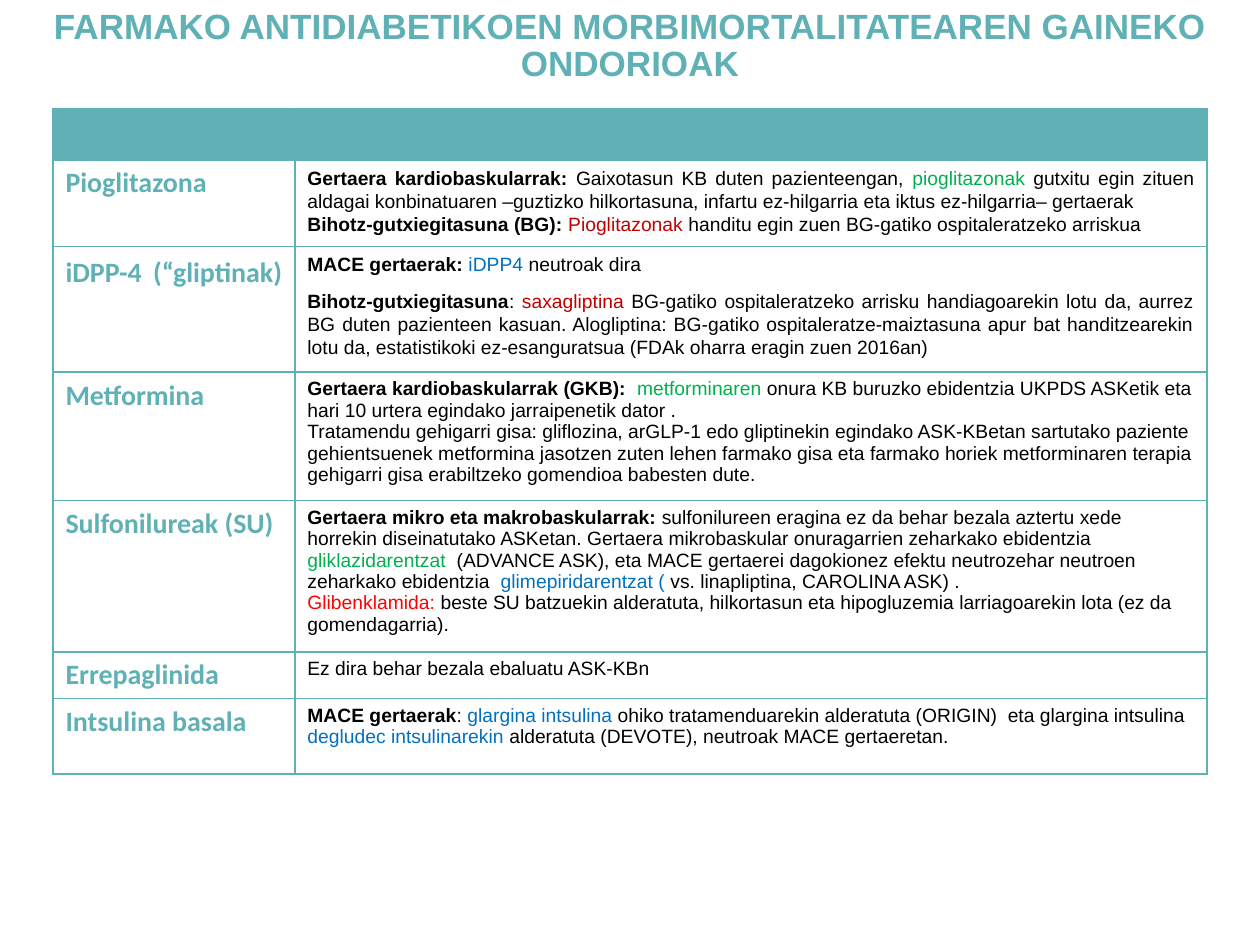
from lxml.etree import SubElement
from pptx import Presentation
from pptx.dml.color import RGBColor
from pptx.enum.text import MSO_ANCHOR, PP_ALIGN as Align
from pptx.oxml.ns import qn
from pptx.util import Inches, Pt

COLORS = {
    "teal": "5FB1B6", "white": "FFFFFF", "text": "000000", "green": "00B050",
    "blue": "0070C0", "dark red": "C00000", "red": "FF0000",
}
TITLE = "FARMAKO ANTIDIABETIKOEN MORBIMORTALITATEAREN GAINEKO ONDORIOAK"

# Paragraph layouts: alignment, line spacing, space after in points
PLAIN = (Align.LEFT, 1.0, 0)
JUSTIFIED = (Align.JUSTIFY, 1.07, 0)
SPACED = (Align.JUSTIFY, 1.07, 8)

# Rows: drug, height, drug layout, effect layout, paragraphs of (text, style)
HEADER_HEIGHT = 0.41
ROWS = [
    ("Pioglitazona", 0.68, PLAIN, JUSTIFIED, [
        [("Gertaera kardiobaskularrak: ", "bold"),
         ("Gaixotasun KB duten pazienteengan, ", "text"),
         ("pioglitazonak ", "green"),
         ("gutxitu egin zituen aldagai konbinatuaren –guztizko hilkortasuna, "
          "infartu ez-hilgarria eta iktus ez-hilgarria– gertaerak", "text")],
        [("Bihotz-gutxiegitasuna (BG): ", "bold"),
         ("Pioglitazonak ", "dark red"),
         ("handitu egin zuen BG-gatiko ospitaleratzeko arriskua", "text")],
    ]),
    ("iDPP-4 (“gliptinak) ", 0.94, SPACED, SPACED, [
        [("MACE gertaerak: ", "bold"), ("iDPP4 ", "blue"), ("neutroak dira", "text")],
        [("Bihotz-gutxiegitasuna", "bold"), (": ", "text"),
         ("saxagliptina", "dark red"),
         (" BG-gatiko ospitaleratzeko arrisku handiagoarekin lotu da, aurrez BG "
          "duten pazienteen kasuan. Alogliptina: BG-gatiko ospitaleratze-maiztasuna "
          "apur bat handitzearekin lotu da, estatistikoki ez-esanguratsua "
          "(FDAk oharra eragin zuen 2016an)", "text")],
    ]),
    ("Metformina", 1.0, PLAIN, PLAIN, [
        [("Gertaera kardiobaskularrak (GKB):  ", "bold"),
         ("metforminaren ", "green"),
         ("onura KB buruzko ebidentzia UKPDS ASKetik eta hari 10 urtera egindako "
          "jarraipenetik dator .", "text")],
        [("Tratamendu gehigarri gisa: gliflozina, arGLP-1 edo gliptinekin egindako "
          "ASK-KBetan sartutako paziente gehientsuenek metformina jasotzen zuten "
          "lehen farmako gisa eta farmako horiek metforminaren terapia gehigarri "
          "gisa erabiltzeko gomendioa babesten dute.", "text")],
    ]),
    ("Sulfonilureak (SU)", 1.13, PLAIN, PLAIN, [
        [("Gertaera mikro eta makrobaskularrak: ", "bold"),
         ("sulfonilureen eragina ez da behar bezala aztertu xede horrekin "
          "diseinatutako ASKetan. Gertaera mikrobaskular onuragarrien zeharkako "
          "ebidentzia  ", "text"),
         ("gliklazidarentzat  ", "green"),
         ("(ADVANCE ASK), eta MACE gertaerei dagokionez efektu neutrozehar "
          "neutroen zeharkako ebidentzia  ", "text"),
         ("glimepiridarentzat ( ", "blue"),
         ("vs. linapliptina, CAROLINA ASK) .", "text")],
        [("Glibenklamida: ", "red"),
         ("beste SU batzuekin alderatuta, hilkortasun eta hipogluzemia "
          "larriagoarekin lota (ez da gomendagarria).", "text")],
    ]),
    ("Errepaglinida", 0.37, PLAIN, PLAIN, [
        [("Ez dira behar bezala ebaluatu ASK-KBn", "text")],
    ]),
    ("Intsulina basala", 0.6, PLAIN, PLAIN, [
        [("MACE gertaerak", "bold"), (": ", "text"),
         ("glargina intsulina ", "blue"),
         ("ohiko tratamenduarekin alderatuta (ORIGIN)  eta glargina intsulina ", "text"),
         ("degludec intsulinarekin ", "blue"),
         ("alderatuta (DEVOTE), neutroak MACE gertaeretan.", "text")],
    ]),
]
COLUMN_WIDTHS = (1.92, 7.24)


def rgb(name):
    return RGBColor.from_string(COLORS[name])


def style_font(font, name, size, color, bold):
    font.name, font.size, font.bold = name, Pt(size), bold
    font.color.rgb = rgb(color)


def style_cell(cell, fill):
    """Fill the cell and draw its four borders."""
    properties = cell._tc.get_or_add_tcPr()
    for side in ("lnL", "lnR", "lnT", "lnB"):
        line = SubElement(properties, qn(f"a:{side}"), w=str(Pt(1)))
        line_fill = SubElement(line, qn("a:solidFill"))
        SubElement(line_fill, qn("a:srgbClr"), val=COLORS["teal"])
    cell.fill.solid()
    cell.fill.fore_color.rgb = rgb(fill)


def write_cell(cell, paragraphs, layout, font_name, size):
    frame = cell.text_frame
    for index, parts in enumerate(paragraphs):
        paragraph = frame.add_paragraph() if index else frame.paragraphs[0]
        alignment, spacing, after = layout
        paragraph.alignment = alignment
        paragraph.line_spacing = spacing
        paragraph.space_after = Pt(after)
        for text, style in parts:
            run = paragraph.add_run()
            run.text = text
            bold = style in ("bold", "teal")
            color = "text" if style == "bold" else style
            style_font(run.font, font_name, size, color, bold)


presentation = Presentation()
presentation.slide_width, presentation.slide_height = Inches(10), Inches(7.5)
slide = presentation.slides.add_slide(presentation.slide_layouts[6])

# Title
title = slide.shapes.add_textbox(Inches(0), Inches(0.06), Inches(10), Inches(0.91))
frame = title.text_frame
frame.word_wrap = True
frame.vertical_anchor = MSO_ANCHOR.BOTTOM
frame.margin_bottom = Inches(0.3)
frame.text = TITLE
paragraph = frame.paragraphs[0]
paragraph.alignment = Align.CENTER
paragraph.line_spacing = 0.9
style_font(paragraph.runs[0].font, "Arial", 20, "teal", True)

# Table of drugs and their effects
heights = [HEADER_HEIGHT] + [row[1] for row in ROWS]
table = slide.shapes.add_table(
    len(heights), len(COLUMN_WIDTHS), Inches(0.42), Inches(0.86),
    Inches(sum(COLUMN_WIDTHS)), Inches(sum(heights))).table
for column, width in zip(table.columns, COLUMN_WIDTHS):
    column.width = Inches(width)
for index, (row, height) in enumerate(zip(table.rows, heights)):
    row.height = Inches(height)
    for cell in row.cells:
        style_cell(cell, "white" if index else "teal")

for index, (drug, _, drug_layout, effect_layout, effects) in enumerate(ROWS, 1):
    write_cell(table.cell(index, 0), [[(drug, "teal")]], drug_layout, "Calibri", 16)
    write_cell(table.cell(index, 1), effects, effect_layout, "Arial", 11)

presentation.save("out.pptx")
